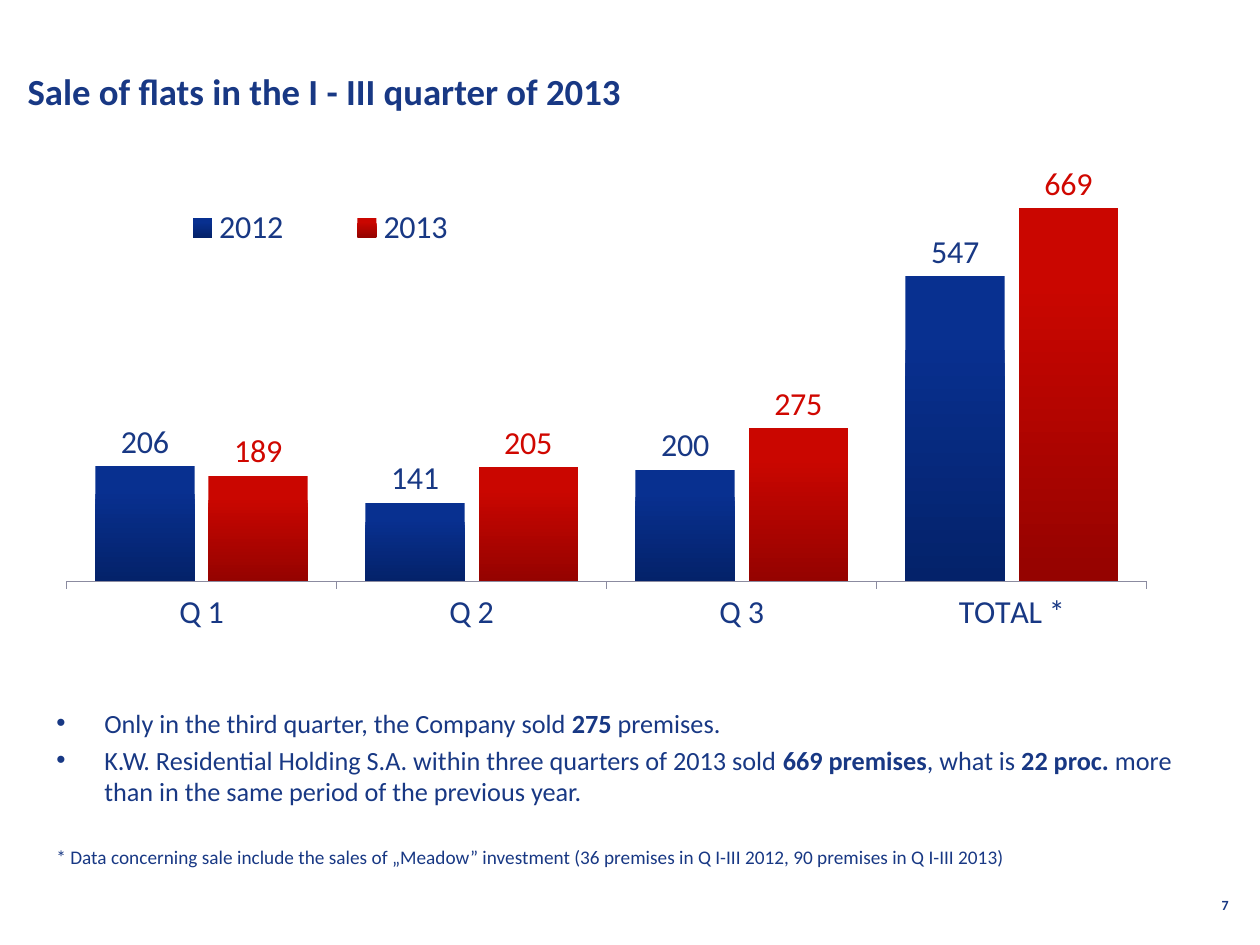
from pptx import Presentation
from pptx.chart.data import CategoryChartData
from pptx.dml.color import RGBColor
from pptx.enum.chart import XL_CHART_TYPE as ChartType, XL_LABEL_POSITION as LabelPos
from pptx.enum.chart import XL_LEGEND_POSITION as LegendPos, XL_TICK_MARK as Tick
from pptx.enum.text import MSO_ANCHOR as Anchor, PP_ALIGN as Align
from pptx.oxml import parse_xml
from pptx.oxml.ns import nsdecls
from pptx.util import Emu, Pt

NAVY, RED, AXIS_GREY = "183884", "D00700", "8B8BA0"


def px(length):
    return Emu(round(length * 914400 / 126))


def color(code):
    return RGBColor.from_string(code)


def set_layout(element, position, x, y, w, h, target=""):
    """Place a chart part by fractions of the chart area."""
    element.insert(position, parse_xml(
        f'<c:layout {nsdecls("c")}><c:manualLayout>{target}'
        '<c:xMode val="edge"/><c:yMode val="edge"/>'
        f'<c:x val="{x}"/><c:y val="{y}"/><c:w val="{w}"/><c:h val="{h}"/>'
        '</c:manualLayout></c:layout>'))


class SlideBuilder:
    font_name = "Calibri"

    def __init__(self, slide):
        self.slide = slide

    def style(self, font, size, code=NAVY, bold=False):
        font.name, font.size, font.bold = self.font_name, Pt(size), bold
        font.color.rgb = color(code)

    def add_runs(self, paragraph, runs, size):
        """Add (text, bold) pairs to a paragraph."""
        for text, bold in runs:
            run = paragraph.add_run()
            run.text = text
            self.style(run.font, size, bold=bold)

    def title(self, text, left, top, width, height):
        title = self.slide.shapes.title
        title.left, title.top, title.width, title.height = map(px, (left, top, width, height))
        frame = title.text_frame
        frame.vertical_anchor = Anchor.MIDDLE
        frame.paragraphs[0].alignment = Align.LEFT
        self.add_runs(frame.paragraphs[0], [(text, True)], 21)

    def text_box(self, left, top, width, height):
        box = self.slide.shapes.add_textbox(*map(px, (left, top, width, height)))
        box.text_frame.word_wrap = True
        return box.text_frame

    def page_number(self, number, *place):
        paragraph = self.text_box(*place).paragraphs[0]
        paragraph.alignment = Align.RIGHT
        self.add_runs(paragraph, [(number, True)], 8)

    def bullet_text(self, bullets, footnote, *place):
        frame = self.text_box(*place)
        for index, runs in enumerate(bullets):
            paragraph = frame.add_paragraph() if index else frame.paragraphs[0]
            props = paragraph._p.get_or_add_pPr()
            props.set("marL", str(px(48)))
            props.set("indent", str(-px(48)))
            props.append(parse_xml(f'<a:buFont {nsdecls("a")} typeface="Arial"/>'))
            props.append(parse_xml(f'<a:buChar {nsdecls("a")} char="•"/>'))
            if index:
                paragraph.space_before = Pt(3)
            self.add_runs(paragraph, runs, 15)
        paragraph = frame.add_paragraph()
        paragraph.space_before = Pt(22)
        self.add_runs(paragraph, [(footnote, False)], 11)

    def column_chart(self, categories, series, *place):
        """Draw clustered columns; series holds (name, values, label, top, bottom)."""
        data = CategoryChartData()
        data.categories = categories
        for name, values, *_ in series:
            data.add_series(name, values)
        chart = self.slide.shapes.add_chart(
            ChartType.COLUMN_CLUSTERED, *map(px, place), data).chart
        chart.has_title = False
        self.style(chart.font, 18.3)

        plot = chart.plots[0]
        plot.gap_width, plot.overlap, plot.vary_by_categories = 58, -14, False
        for columns, (_, _, label, top, bottom) in zip(plot.series, series):
            fill = columns.format.fill
            fill.gradient()
            fill.gradient_angle = 270
            for stop, code, position in zip(fill.gradient_stops, (top, bottom), (0.2, 1)):
                stop.color.rgb, stop.position = color(code), position
            columns.format.line.fill.background()
            labels = columns.data_labels
            labels.show_value = True
            labels.position = LabelPos.OUTSIDE_END
            self.style(labels.font, 18.3, label)

        values_axis = chart.value_axis
        values_axis.minimum_scale, values_axis.maximum_scale = 0, 800
        values_axis.has_major_gridlines = False
        values_axis.visible = False
        quarters_axis = chart.category_axis
        quarters_axis.major_tick_mark = Tick.OUTSIDE
        quarters_axis.format.line.color.rgb = color(AXIS_GREY)
        quarters_axis.format.line.width = Pt(0.75)

        chart.has_legend = True
        chart.legend.position = LegendPos.RIGHT
        chart.legend.include_in_layout = False
        set_layout(chart.legend._element, 1, 0.06, 0.12, 0.34, 0.09)
        area = chart._chartSpace.chart.plotArea
        for layout in area.findall("{*}layout"):
            area.remove(layout)
        set_layout(area, 0, 0.004, 0, 0.962, 0.793, '<c:layoutTarget val="inner"/>')


def main():
    deck = Presentation()
    deck.slide_width, deck.slide_height = px(1260), px(945)
    page = SlideBuilder(deck.slides.add_slide(deck.slide_layouts[5]))
    page.page_number("7", 948, 890, 293, 46)
    page.title("Sale of flats in the I - III quarter of 2013", 15, 45, 1032, 91)
    page.bullet_text(
        [
            [("Only in the third quarter, the Company sold ", False),
             ("275 ", True), ("premises.", False)],
            [("K.W. Residential Holding S.A. within three quarters of 2013 sold ", False),
             ("669 premises", True), (", what is ", False), ("22 proc. ", True),
             ("more than in the same period of the previous year.", False)],
        ],
        "* Data concerning sale include the sales of „Meadow” investment "
        "(36 premises in Q I-III 2012, 90 premises in Q I-III 2013)",
        44, 701, 1171, 149)
    page.column_chart(
        ["Q 1", "Q 2", "Q 3", "TOTAL *"],
        [("2012", (206, 141, 200, 547), NAVY, "083090", "04226A"),
         ("2013", (189, 205, 275, 669), RED, "CA0600", "950300")],
        62, 135, 1123, 563)
    deck.save("out.pptx")


if __name__ == "__main__":
    main()
